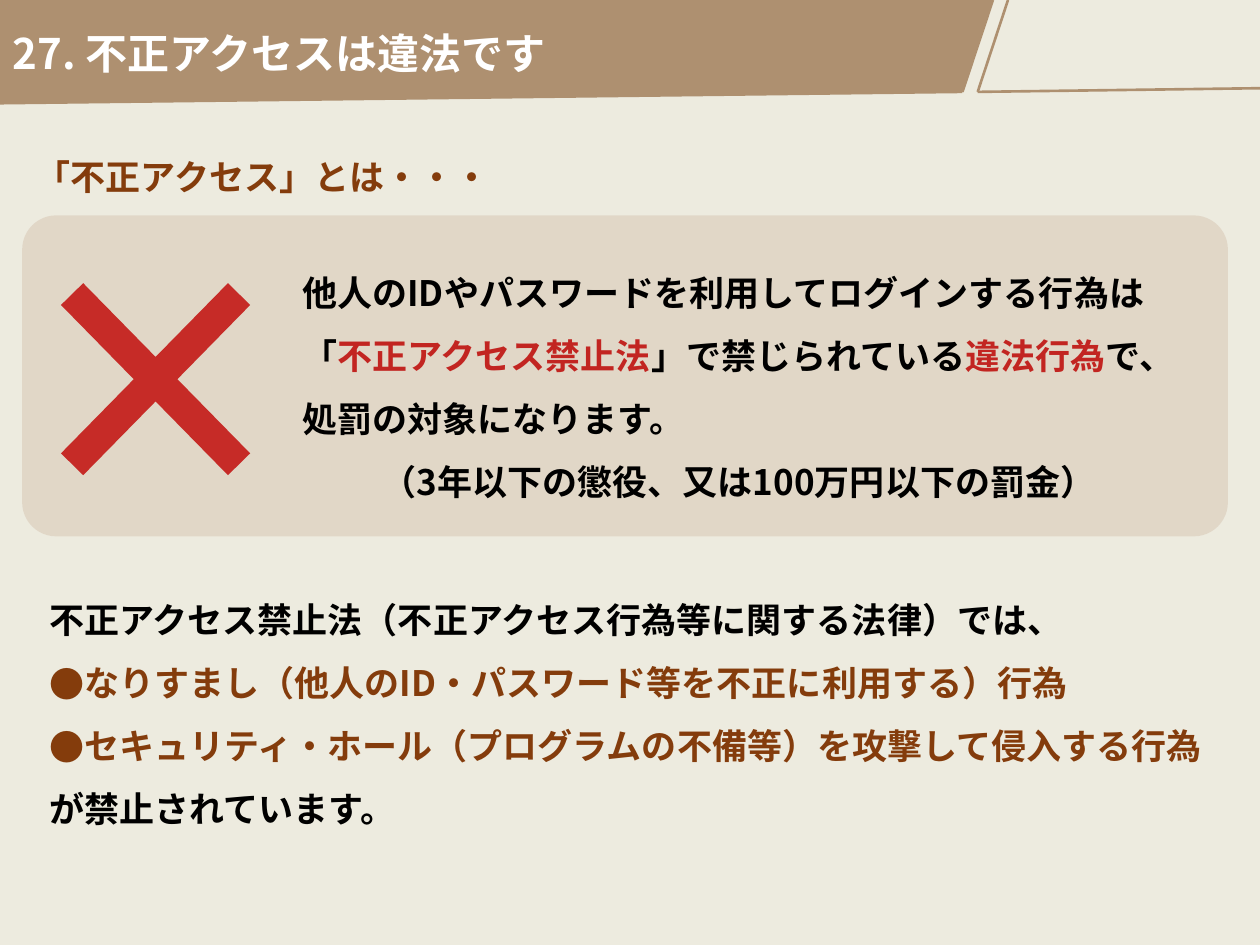
"""Build the slide explaining that unauthorised access is illegal."""
import pptx
import pptx.util
import pptx.oxml.ns
import pptx.oxml.xmlchemy
import pptx.dml.color
import pptx.enum.shapes
import pptx.enum.text

Pt = pptx.util.Pt
qn = pptx.oxml.ns.qn
new_element = pptx.oxml.xmlchemy.OxmlElement
SHAPE = pptx.enum.shapes.MSO_SHAPE
ANCHOR = pptx.enum.text.MSO_ANCHOR
ALIGN = pptx.enum.text.PP_ALIGN

COLORS = {
    "paper": "EDEBDF", "band": "AE9070", "panel": "D7C5B1", "cross": "C00000",
    "title": "FFFFFF", "text": "000000", "key": "C22521", "brown": "843C0C",
}


def rgb(name):
    return pptx.dml.color.RGBColor.from_string(COLORS[name])


def add_run(p, text, color="text", size=20, font="Noto Sans CJK JP"):
    r = p.add_run()
    r.text = text
    r.font.size = Pt(size)
    r.font.bold = True
    r.font.name = font
    r.font.color.rgb = rgb(color)
    ea = new_element("a:ea")
    ea.set("typeface", font)
    r.font._element.find(qn("a:latin")).addnext(ea)


def set_bullet(p, char=None, indent=0):
    pPr = p._p.get_or_add_pPr()
    pPr.set("marL", str(Pt(indent)))
    pPr.set("indent", str(-Pt(indent)))
    bullet = new_element("a:buChar" if char else "a:buNone")
    if char:
        font = new_element("a:buFont")
        font.set("typeface", "Noto Sans CJK JP")
        pPr.append(font)
        bullet.set("char", char)
    pPr.append(bullet)


class Deck:
    def __init__(self):
        self.prs = pptx.Presentation()
        self.prs.slide_width, self.prs.slide_height = Pt(720), Pt(540)
        self.s = self.prs.slides.add_slide(self.prs.slide_layouts[1])
        fill = self.s.background.fill
        fill.solid()
        fill.fore_color.rgb = rgb("paper")

    def fill(self, sp, color, alpha=100):
        sp.shadow.inherit = False
        sp.line.fill.background()
        sp.fill.solid()
        sp.fill.fore_color.rgb = rgb(color)
        if alpha < 100:
            el = new_element("a:alpha")
            el.set("val", str(alpha * 1000))
            sp._element.spPr.find(".//" + qn("a:srgbClr")).append(el)

    def shape(self, kind, box, color, adj, alpha):
        sp = self.s.shapes.add_shape(kind, *map(Pt, box))
        sp.adjustments[0] = adj
        self.fill(sp, color, alpha)

    def polygon(self, points, color):
        points = [(Pt(x), Pt(y)) for x, y in points]
        builder = self.s.shapes.build_freeform(*points[0])
        builder.add_line_segments(points[1:])
        self.fill(builder.convert_to_shape(), color)

    def line(self, start, end, color):
        kind = pptx.enum.shapes.MSO_CONNECTOR.STRAIGHT
        cn = self.s.shapes.add_connector(kind, *map(Pt, start + end))
        cn.line.color.rgb = rgb(color)
        cn.line.width = Pt(1.5)
        cn._element.spPr.append(new_element("a:effectLst"))

    def place(self, sp, box):
        sp.left, sp.top, sp.width, sp.height = map(Pt, box)
        self.s.shapes._spTree.append(sp._element)
        sp.text_frame.auto_size = pptx.enum.text.MSO_AUTO_SIZE.NONE
        sp.text_frame.word_wrap = True
        return sp.text_frame

    def title(self, text, box):
        tf = self.place(self.s.shapes.title, box)
        tf.vertical_anchor = ANCHOR.MIDDLE
        p = tf.paragraphs[0]
        p.alignment = ALIGN.LEFT
        p.line_spacing = 0.9
        add_run(p, text, "title", 24)

    def paragraphs(self, tf, rows):
        for i, (align, runs) in enumerate(rows):
            p = tf.add_paragraph() if i else tf.paragraphs[0]
            p.alignment = align
            p.line_spacing = 1.5
            p.space_before = Pt(0)
            for text, color in runs:
                add_run(p, text, color)

    def text(self, rows, box):
        tf = self.s.shapes.add_textbox(*map(Pt, box)).text_frame
        tf.word_wrap = False
        self.paragraphs(tf, rows)

    def body(self, rows, box):
        tf = self.place(self.s.placeholders[1], box)
        tf.vertical_anchor = ANCHOR.TOP
        self.paragraphs(tf, [(ALIGN.LEFT, [(t, c)]) for t, c, _ in rows])
        for p, (_, _, char) in zip(tf.paragraphs, rows):
            set_bullet(p, char, 20 if char else 0)


def main():
    deck = Deck()
    deck.polygon([(0, 0), (0, 59), (550, 52.5), (567.4, 0)], "band")
    for start, end in [((0, 59), (550, 52.5)), ((558.7, 52.5), (720, 50.4)),
                       ((550, 52.5), (567.4, 0)), ((558.7, 52.5), (576, 0))]:
        deck.line(start, end, "band")
    deck.title("27. 不正アクセスは違法です", (0, 0, 620.6, 64))

    deck.text([(ALIGN.CENTER, [("「不正アクセス」とは・・・", "brown")])],
              (11.5, 73.4, 277.2, 40.3))
    deck.shape(SHAPE.ROUNDED_RECTANGLE, (12.7, 123.1, 689, 183.4), "panel", 0.106, 50)
    deck.shape(SHAPE.MATH_MULTIPLY, (-2.9, 123.1, 183.6, 187.2), "cross", 0.097, 80)
    deck.text([
        (ALIGN.LEFT, [("他人のIDやパスワードを利用してログインする行為は", "text")]),
        (ALIGN.LEFT, [("「", "text"), ("不正アクセス禁止法", "key"),
                      ("」で禁じられている", "text"), ("違法行為", "key"),
                      ("で、", "text")]),
        (ALIGN.LEFT, [("処罰の対象になります。", "text")]),
        (ALIGN.CENTER, [("（3年以下の懲役、又は100万円以下の罰金）", "text")]),
    ], (165.6, 139.7, 519.1, 149.8))

    deck.body([
        ("不正アクセス禁止法（不正アクセス行為等に関する法律）では、", "text", None),
        ("なりすまし（他人のID・パスワード等を不正に利用する）行為", "brown", "●"),
        ("セキュリティ・ホール（プログラムの不備等）を攻撃して侵入する行為", "brown", "●"),
        ("が禁止されています。", "text", None),
    ], (20.9, 326.2, 681.1, 149.8))
    deck.prs.save("out.pptx")


if __name__ == "__main__":
    main()
